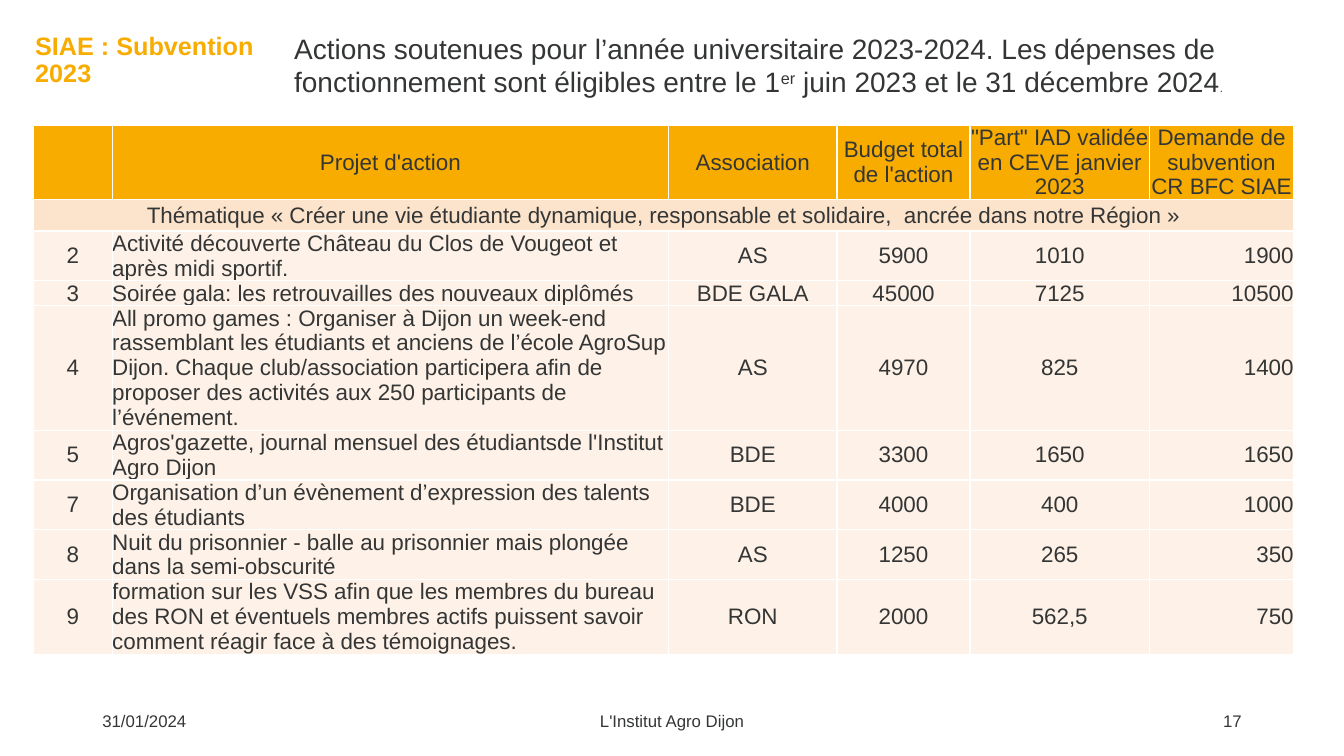
from typing import NamedTuple

from lxml.etree import SubElement
from pptx import Presentation
from pptx.dml.color import RGBColor
from pptx.enum.text import MSO_ANCHOR, MSO_AUTO_SIZE, PP_ALIGN
from pptx.oxml.ns import qn
from pptx.util import Inches, Pt

COLOURS = {"text": "343636", "accent": "F8AC00", "theme": "FCE3CB",
           "row": "FEF1E7", "border": "FFFFFF"}
FONT = "Arial"
SLIDE_WIDTH, SLIDE_HEIGHT = Inches(13.33), Inches(7.5)
LEFT, CENTRE, RIGHT = PP_ALIGN.LEFT, PP_ALIGN.CENTER, PP_ALIGN.RIGHT

# Lengths are percentages of the slide's width or height.
TABLE_LEFT, TABLE_TOP = 2.5, 16.53
COLUMN_WIDTHS = (5.85, 41.4, 12.53, 9.9, 13.35, 10.73)
LINE_HEIGHT = 3.2
HEADER_LINES, THEME_LINES = 3, 1.3

HEADERS = ("", "Projet d'action", "Association", "Budget total de l'action",
           "\"Part\" IAD validée en CEVE janvier 2023",
           "Demande de subvention CR BFC SIAE")
THEME = ("Thématique « Créer une vie étudiante dynamique, responsable et "
         "solidaire,  ancrée dans notre Région »")


class Action(NamedTuple):
    number: str
    project: str
    association: str
    budget: str
    school_share: str
    request: str
    lines: int = 2


class Piece(NamedTuple):
    text: str
    size: float
    colour: str = "text"
    bold: bool = False
    superscript: bool = False


class Block(NamedTuple):
    left: float
    top: float
    width: float
    height: float
    pieces: tuple[Piece, ...]
    align: PP_ALIGN = LEFT
    anchor: MSO_ANCHOR = MSO_ANCHOR.MIDDLE
    line_spacing: float = 1.0
    grows: bool = False


ACTIONS = (
    Action("2", "Activité découverte Château du Clos de Vougeot et après midi sportif.",
           "AS", "5900", "1010", "1900"),
    Action("3", "Soirée gala: les retrouvailles des nouveaux diplômés",
           "BDE GALA", "45000", "7125", "10500", lines=1),
    Action("4", "All promo games : Organiser à Dijon un week-end rassemblant les "
           "étudiants et anciens de l’école AgroSup Dijon. Chaque club/association "
           "participera afin de proposer des activités aux 250 participants de "
           "l’événement.", "AS", "4970", "825", "1400", lines=5),
    Action("5", "Agros'gazette, journal mensuel des étudiantsde l'Institut Agro Dijon",
           "BDE", "3300", "1650", "1650"),
    Action("7", "Organisation d’un évènement d’expression des talents des étudiants",
           "BDE", "4000", "400", "1000"),
    Action("8", "Nuit du prisonnier - balle au prisonnier mais plongée dans la "
           "semi-obscurité", "AS", "1250", "265", "350"),
    Action("9", "formation sur les VSS afin que les membres du bureau des RON et "
           "éventuels membres actifs puissent savoir comment réagir face à des "
           "témoignages.", "RON", "2000", "562,5", "750", lines=3),
)
ACTION_ALIGNS = (CENTRE, LEFT, CENTRE, CENTRE, CENTRE, RIGHT)

FOOTER_TOP, FOOTER_HEIGHT = 92.67, 5.33
BLOCKS = (
    Block(6.88, FOOTER_TOP, 22.5, FOOTER_HEIGHT, (Piece("31/01/2024", 12),)),
    Block(33.13, FOOTER_TOP, 33.75, FOOTER_HEIGHT,
          (Piece("L'Institut Agro Dijon", 12),), CENTRE),
    Block(70.63, FOOTER_TOP, 22.5, FOOTER_HEIGHT, (Piece("17", 12),), RIGHT),
    Block(21.15, 3.47, 71.93, 10.27, (
        Piece("Actions soutenues pour l’année universitaire 2023-2024. Les dépenses "
              "de fonctionnement sont éligibles entre le 1", 20),
        Piece("er", 20, superscript=True),
        Piece(" juin 2023 et le 31 décembre 2024", 20),
        Piece(".", 8)), anchor=MSO_ANCHOR.TOP, grows=True),
    Block(1.88, 3.87, 18.45, 8.27,
          (Piece("SIAE : Subvention 2023", 18, "accent", bold=True),),
          line_spacing=0.9),
)


def across(percent: float) -> int:
    return round(SLIDE_WIDTH * percent / 100)


def down(percent: float) -> int:
    return round(SLIDE_HEIGHT * percent / 100)


def colour(name: str) -> RGBColor:
    return RGBColor.from_string(COLOURS[name])


def add_piece(paragraph, piece: Piece) -> None:
    run = paragraph.add_run()
    run.text = piece.text
    run.font.name = FONT
    run.font.size = Pt(piece.size)
    run.font.bold = piece.bold
    run.font.color.rgb = colour(piece.colour)
    if piece.superscript:
        run._r.get_or_add_rPr().set("baseline", "30000")


def add_block(slide, block: Block) -> None:
    frame = slide.shapes.add_textbox(across(block.left), down(block.top),
                                     across(block.width), down(block.height)).text_frame
    frame.word_wrap = True
    frame.vertical_anchor = block.anchor
    if block.grows:
        frame.auto_size = MSO_AUTO_SIZE.SHAPE_TO_FIT_TEXT
    paragraph = frame.paragraphs[0]
    paragraph.alignment = block.align
    paragraph.line_spacing = block.line_spacing
    for piece in block.pieces:
        add_piece(paragraph, piece)


def add_borders(cell) -> None:
    properties = cell._tc.get_or_add_tcPr()
    for side in ("lnL", "lnR", "lnT", "lnB"):
        line = SubElement(properties, qn(f"a:{side}"), w=str(Pt(1)))
        fill = SubElement(line, qn("a:solidFill"))
        SubElement(fill, qn("a:srgbClr"), val=COLOURS["border"])


def fill_cell(cell, text: str, fill: str, align: PP_ALIGN = CENTRE) -> None:
    add_borders(cell)
    cell.fill.solid()
    cell.fill.fore_color.rgb = colour(fill)
    cell.vertical_anchor = MSO_ANCHOR.MIDDLE
    cell.margin_left = cell.margin_right = cell.margin_top = cell.margin_bottom = 0
    paragraph = cell.text_frame.paragraphs[0]
    paragraph.alignment = align
    if text:
        add_piece(paragraph, Piece(text, 16))


def add_actions_table(slide) -> None:
    row_lines = (HEADER_LINES, THEME_LINES, *(action.lines for action in ACTIONS))
    table = slide.shapes.add_table(
        len(row_lines), len(COLUMN_WIDTHS), across(TABLE_LEFT), down(TABLE_TOP),
        across(sum(COLUMN_WIDTHS)), down(sum(row_lines) * LINE_HEIGHT)).table
    table.first_row = table.horz_banding = False
    for column, width in zip(table.columns, COLUMN_WIDTHS):
        column.width = across(width)
    for row, lines in zip(table.rows, row_lines):
        row.height = down(lines * LINE_HEIGHT)

    for index, header in enumerate(HEADERS):
        fill_cell(table.cell(0, index), header, "accent")
        fill_cell(table.cell(1, index), "" if index else THEME, "theme")
    table.cell(1, 0).merge(table.cell(1, len(HEADERS) - 1))
    for row_index, action in enumerate(ACTIONS, start=2):
        for index, (text, align) in enumerate(zip(action, ACTION_ALIGNS)):
            fill_cell(table.cell(row_index, index), text, "row", align)


def main() -> None:
    presentation = Presentation()
    presentation.slide_width, presentation.slide_height = SLIDE_WIDTH, SLIDE_HEIGHT
    slide = presentation.slides.add_slide(presentation.slide_layouts[6])
    add_actions_table(slide)
    for block in BLOCKS:
        add_block(slide, block)
    presentation.save("out.pptx")


if __name__ == "__main__":
    main()
